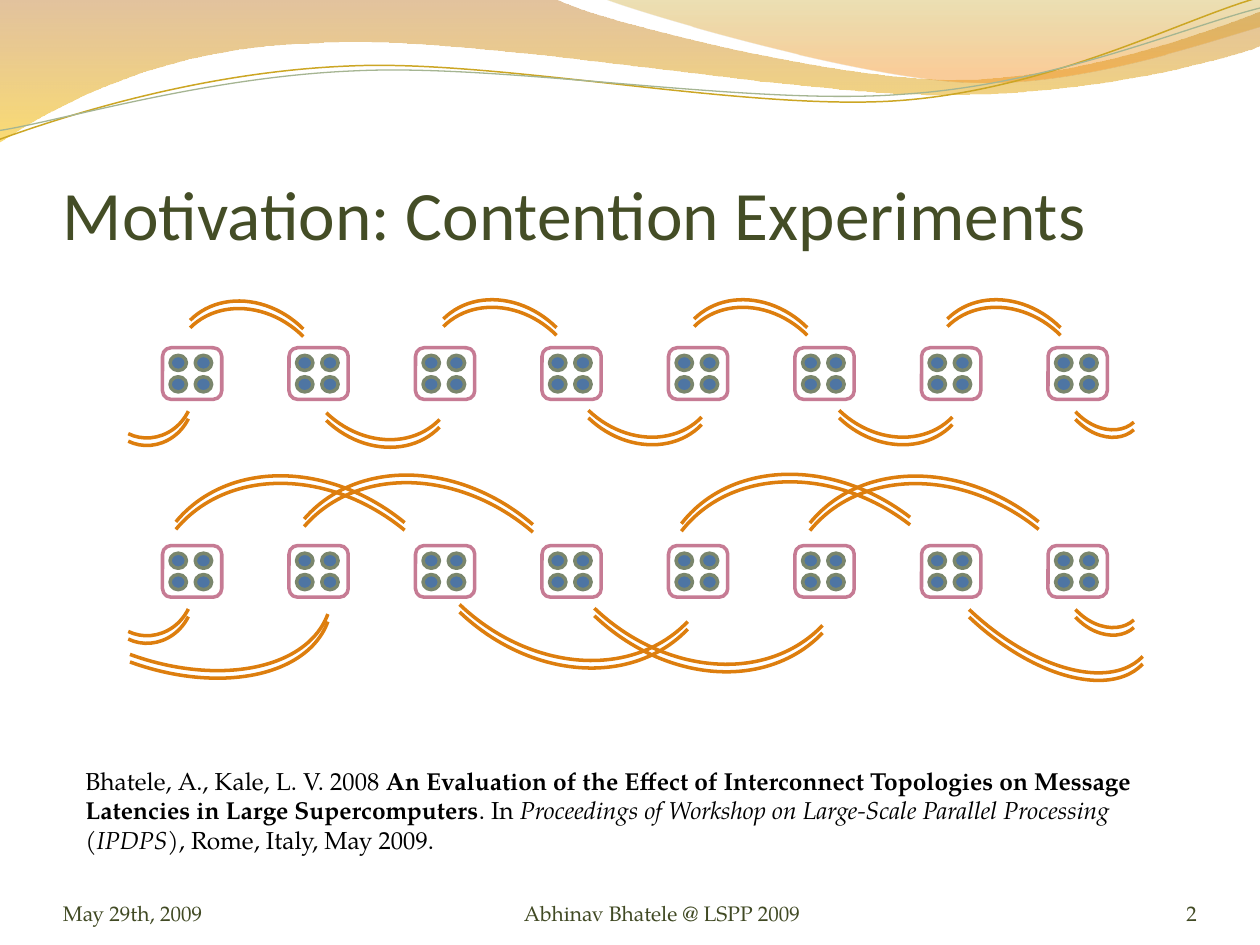
from lxml.etree import SubElement
from pptx import Presentation
from pptx.dml.color import RGBColor
from pptx.enum.shapes import MSO_SHAPE as Shape
from pptx.enum.text import MSO_ANCHOR as Anchor, PP_ALIGN as Align
from pptx.oxml.ns import qn
from pptx.util import Inches, Pt

TITLE_GREEN = RGBColor(0x44, 0x4D, 0x26)
FOOTER_GREEN = RGBColor(0x41, 0x4A, 0x24)
BLACK = RGBColor(0, 0, 0)
CORE_BLUE = RGBColor(0x4E, 0x75, 0xA3)
CORE_EDGE = RGBColor(0x7A, 0x86, 0x6C)
NODE_PINK = RGBColor(0xB5, 0x54, 0x75)
LINK_ORANGE = RGBColor(0xDD, 0x7E, 0x0E)
GOLD = RGBColor(0xCC, 0xA6, 0x24)
SAGE = RGBColor(0xA5, 0xB5, 0x92)
BROWN = RGBColor(0xC0, 0x7A, 0x28)
YELLOW = RGBColor(0xF7, 0xBF, 0x00)
OLIVE = RGBColor(0xC0, 0x97, 0x09)
APRICOT = RGBColor(0xF5, 0x93, 0x20)
SERIF = "TeX Gyre Pagella"

prs = Presentation()
prs.slide_width, prs.slide_height = Inches(10), Inches(7.5)
slide = prs.slides.add_slide(prs.slide_layouts[6])
shapes = slide.shapes


def add_wave(start, *segments, closed=False):
    """Draw a freeform; a segment is one end point or three Bezier points."""
    builder = shapes.build_freeform(*map(Inches, start))
    builder.add_line_segments(
        [tuple(map(Inches, point)) for segment in segments for point in segment],
        close=closed)
    wave = builder.convert_to_shape()
    wave.shadow.inherit = False
    steps = iter(list(wave._element.iter(qn("a:lnTo"))))
    for segment in segments:
        first, *others = [next(steps) for _ in segment]
        if others:
            first.tag = qn("a:cubicBezTo")
            for step in others:
                first.append(step[0])
                step.getparent().remove(step)
    return wave


def add_text(left, top, width, height, runs, size, color, font=SERIF,
             align=Align.LEFT, anchor=Anchor.BOTTOM, insets=(0, 0, 0, 0)):
    frame = shapes.add_textbox(*map(Inches, (left, top, width, height))).text_frame
    frame.word_wrap = True
    frame.vertical_anchor = anchor
    (frame.margin_left, frame.margin_top,
     frame.margin_right, frame.margin_bottom) = map(Inches, insets)
    line = frame.paragraphs[0]
    line.alignment = align
    line.font.size, line.font.name = Pt(size), font
    line.font.color.rgb = color
    for text, bold, italic in runs:
        run = line.add_run()
        run.text = text
        if bold:
            run.font.bold = True
        if italic:
            run.font.italic = True


# Header waves
broad_wave = add_wave(
    (0, 0), [(4.4, -0.01)],
    [(4.76, 0.17), (6.64, 0.63), (7.58, 0.63)],
    [(8.53, 0.63), (9.58, 0.26), (10, 0.09)], [(10.01, 0.36)],
    [(9.83, 0.44), (8.7, 0.76), (7.46, 0.75)],
    [(6.22, 0.75), (3.82, 0.28), (2.57, 0.34)],
    [(1.29, 0.36), (0.46, 0.83), (-0.01, 1.13)], [(0, 0)], closed=True)
right_wave = add_wave(
    (4.79, -0.01),
    [(5.09, 0.11), (6.82, 0.62), (7.69, 0.65)],
    [(8.56, 0.69), (9.61, 0.32), (10, 0.21)], [(10, 0)], [(4.79, -0.01)], closed=True)
for wave, stops in (
        (broad_wave, ((0, BROWN, 45), (1, YELLOW, 55))),
        (right_wave, ((0, OLIVE, 30), (0.8, APRICOT, 45)))):
    wave.line.fill.background()
    wave.fill.gradient()
    wave.fill.gradient_angle = 270
    for stop, (position, color, opacity) in zip(wave.fill.gradient_stops, stops):
        stop.position = position
        stop.color.rgb = color
    for tint, (_, _, opacity) in zip(wave._element.spPr.iter(qn("a:srgbClr")), stops):
        SubElement(tint, qn("a:alpha"), val=str(opacity * 1000))

gold_line = add_wave(
    (-0.02, 0.87), [(0.47, 0.72), (1.58, 0.41), (2.78, 0.42)],
    [(3.96, 0.42), (5.91, 0.93), (7.12, 0.9)],
    [(8.32, 0.87), (9.4, 0.36), (10, 0.22)])
sage_line = add_wave(
    (-0.02, 0.8), [(0.46, 0.75), (1.64, 0.45), (2.83, 0.46)],
    [(4.03, 0.46), (5.96, 0.89), (7.16, 0.85)],
    [(8.35, 0.83), (9.42, 0.42), (10.02, 0.3)])
for wave, color, weight in ((gold_line, GOLD, 0.85), (sage_line, SAGE, 0.75)):
    wave.rotation = 357.3
    wave.fill.background()
    wave.line.color.rgb = color
    wave.line.width = Pt(weight)

# Title and footer
add_text(0.5, 0.77, 9, 1.25, [("Motivation: Contention Experiments", False, False)],
         39.6, TITLE_GREEN, "Calibri", insets=(0, 0.05, 0, 0))
for left, width, text, align in (
        (0.5, 2.33, "May 29th, 2009", Align.LEFT),
        (8.67, 0.83, "2", Align.RIGHT),
        (3.42, 3.67, "Abhinav Bhatele @ LSPP 2009", Align.CENTER)):
    add_text(left, 6.95, width, 0.4, [(text, False, False)], 12, FOOTER_GREEN, align=align)

# Two rows of eight nodes with four cores each
NODE_LEFT, NODE_TOP, NODE_PITCH, ROW_PITCH = 1.29, 2.76, 1.004, 1.57
outlined = []
for row in range(2):
    for column in range(8):
        x, y = NODE_LEFT + column * NODE_PITCH, NODE_TOP + row * ROW_PITCH
        node = shapes.add_shape(Shape.ROUNDED_RECTANGLE,
                                *map(Inches, (x, y, 0.47, 0.41)))
        node.fill.background()
        outlined.append((node, NODE_PINK))
        for core_index in range(4):
            core_row, core_column = divmod(core_index, 2)
            core = shapes.add_shape(Shape.OVAL, *map(Inches, (
                x + 0.06 + 0.2 * core_column, y + 0.06 + 0.17 * core_row, 0.13, 0.12)))
            core.fill.solid()
            core.fill.fore_color.rgb = CORE_BLUE
            outlined.append((core, CORE_EDGE))

# Links: (width, height), then (left, top, rotation) of the upper line of each pair
NEAR, FAR = (1.17, 1.37), (2.3, 2.81)
LEFT_END, RIGHT_END = (0.74, 0.7), (0.57, 0.75)
links = [
    (NEAR, [(1.41, 2.34, 314.9), (3.42, 2.33, 314.9), (5.41, 2.33, 314.9),
            (7.42, 2.33, 314.9), (2.41, 2.17, 133.9), (4.49, 2.15, 133.9),
            (6.48, 2.15, 133.9)]),
    (FAR, [(1.33, 3.63, 309.5), (2.33, 3.63, 310.7), (5.37, 3.61, 307.7),
           (6.37, 3.63, 309), (3.29, 2.56, 133.6), (4.36, 2.59, 133.6)]),
    (LEFT_END, [(0.81, 2.76 + row * ROW_PITCH, 116.1) for row in range(2)]),
    (RIGHT_END, [(8.46, 2.7 + row * ROW_PITCH, 137.4) for row in range(2)]),
    ((1.36, 2.51), [(7.48, 3.09, 133.6)]),
    ((1.68, 2.73), [(0.48, 3.04, 110.1)]),
]
for size, places in links:
    for left, top, rotation in places:
        for offset in (0, 0.06):
            link = shapes.add_shape(Shape.ARC, *map(Inches, (left, top + offset, *size)))
            link.rotation = rotation
            link.fill.background()
            outlined.append((link, LINK_ORANGE))

for shape, color in outlined:
    shape.shadow.inherit = False
    shape.line.color.rgb = color
    shape.line.width = Pt(2)
    if color == NODE_PINK:
        SubElement(next(shape.line._ln.iter(qn("a:srgbClr"))), qn("a:alpha"), val="77000")

# Reference
add_text(0.58, 6.03, 8.75, 0.81, [
    ("Bhatele, A., Kale, L. V. 2008 ", False, False),
    ("An Evaluation of the Effect of Interconnect Topologies on Message "
     "Latencies in Large Supercomputers", True, False),
    (". In ", False, False),
    ("Proceedings of Workshop on Large-Scale Parallel Processing (IPDPS)", False, True),
    (", Rome, Italy, May 2009.", False, False),
], 14, BLACK, anchor=Anchor.TOP, insets=(0.1, 0.05, 0.1, 0.05))

prs.save("out.pptx")
